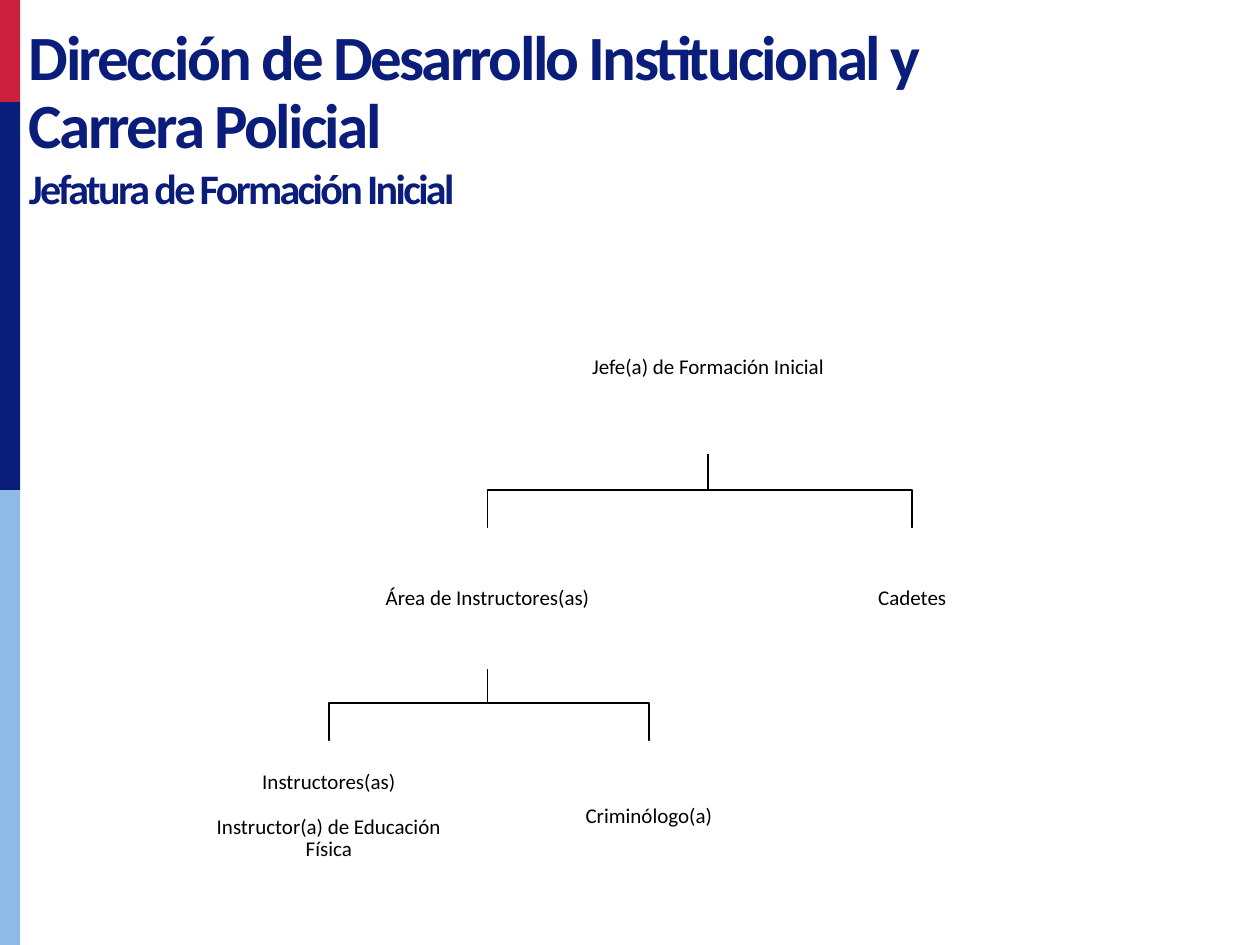
from pptx import Presentation
from pptx.dml.color import RGBColor
from pptx.enum.shapes import MSO_SHAPE as Shape
from pptx.enum.text import MSO_ANCHOR as Anchor, PP_ALIGN as Align
from pptx.util import Inches, Pt

COLORS = {"red": "CA1F3D", "navy": "0A1D7A", "sky": "8FBAE5", "white": "FFFFFF", "black": "000000"}
FONT = "Calibri"

HEADING = [
    ("Dirección de Desarrollo Institucional y Carrera Policial", 36, 0.9),
    ("Jefatura de Formación Inicial", 24, 1.0),
]
SIDE_BAR = [("red", 0.81), ("navy", 3.08), ("sky", 3.61)]
BAR_WIDTH = 0.16

LEVELS = [(2.24, 2.94, 1.36), (4.19, 2.48, 1.12), (5.88, 2.2, 1.2)]
POSTS = {
    "jefe": (0, 5.62, None, ["Jefe(a) de Formación Inicial"]),
    "area": (1, 3.87, "jefe", ["Área de Instructores(as)"]),
    "cadetes": (1, 7.24, "jefe", ["Cadetes"]),
    "instructores": (2, 2.61, "area", ["Instructores(as)", "Instructor(a) de Educación Física"]),
    "criminologo": (2, 5.15, "area", ["Criminólogo(a)"]),
}
BEND_ABOVE_POST = 0.3


def color(name):
    return RGBColor.from_string(COLORS[name])


def add_block(slide, left, top, width, height, fill):
    block = slide.shapes.add_shape(
        Shape.RECTANGLE, Inches(left), Inches(top), Inches(width), Inches(height))
    block.shadow.inherit = False
    block.fill.solid()
    block.fill.fore_color.rgb = color(fill)
    block.line.fill.background()
    return block


def set_font(paragraph, size, name):
    paragraph.font.name = FONT
    paragraph.font.size = Pt(size)
    paragraph.font.color.rgb = color(name)


def add_heading(slide):
    title = slide.shapes.title
    title.left, title.top = Inches(0.13), Inches(0.16)
    title.width, title.height = Inches(7.46), Inches(1.6)
    frame = title.text_frame
    frame.word_wrap = True
    frame.vertical_anchor = Anchor.TOP
    frame.text = "\n".join(text for text, _, _ in HEADING)
    for paragraph, (_, size, spacing) in zip(frame.paragraphs, HEADING):
        paragraph.alignment = Align.LEFT
        paragraph.line_spacing = spacing
        set_font(paragraph, size, "navy")
        paragraph.font.bold = True
        paragraph.runs[0]._r.get_or_add_rPr().set("spc", "-150")


def add_branch(slide, post):
    level, center, parent, _ = post
    parent_level, parent_center, _, _ = POSTS[parent]
    parent_top, _, parent_height = LEVELS[parent_level]
    top = LEVELS[level][0]
    bend = top - BEND_ABOVE_POST
    route = [(parent_center, bend), (center, bend), (center, top)]
    builder = slide.shapes.build_freeform(
        Inches(parent_center), Inches(parent_top + parent_height))
    builder.add_line_segments([(Inches(x), Inches(y)) for x, y in route], close=False)
    branch = builder.convert_to_shape()
    branch.shadow.inherit = False
    branch.fill.background()
    branch.line.color.rgb = color("black")
    branch.line.width = Pt(1)


def add_post(slide, post):
    level, center, _, labels = post
    top, width, height = LEVELS[level]
    frame = add_block(slide, center - width / 2, top, width, height, "white").text_frame
    frame.word_wrap = True
    frame.vertical_anchor = Anchor.MIDDLE
    frame.margin_left = frame.margin_right = Inches(0.02)
    frame.margin_top = frame.margin_bottom = Inches(0.01)
    frame.text = "\n".join(labels)
    for index, paragraph in enumerate(frame.paragraphs):
        paragraph.alignment = Align.CENTER
        paragraph.line_spacing = 0.9
        if index:
            paragraph.space_before = Pt(12.5)
        set_font(paragraph, 12, "black")


def main():
    deck = Presentation()
    deck.slide_width, deck.slide_height = Inches(10), Inches(7.5)
    slide = deck.slides.add_slide(deck.slide_layouts[5])

    bar_top = 0
    for fill, height in SIDE_BAR:
        add_block(slide, 0, bar_top, BAR_WIDTH, height, fill)
        bar_top += height

    for post in POSTS.values():
        if post[2]:
            add_branch(slide, post)
    for post in POSTS.values():
        add_post(slide, post)
    add_heading(slide)
    deck.save("out.pptx")


if __name__ == "__main__":
    main()
